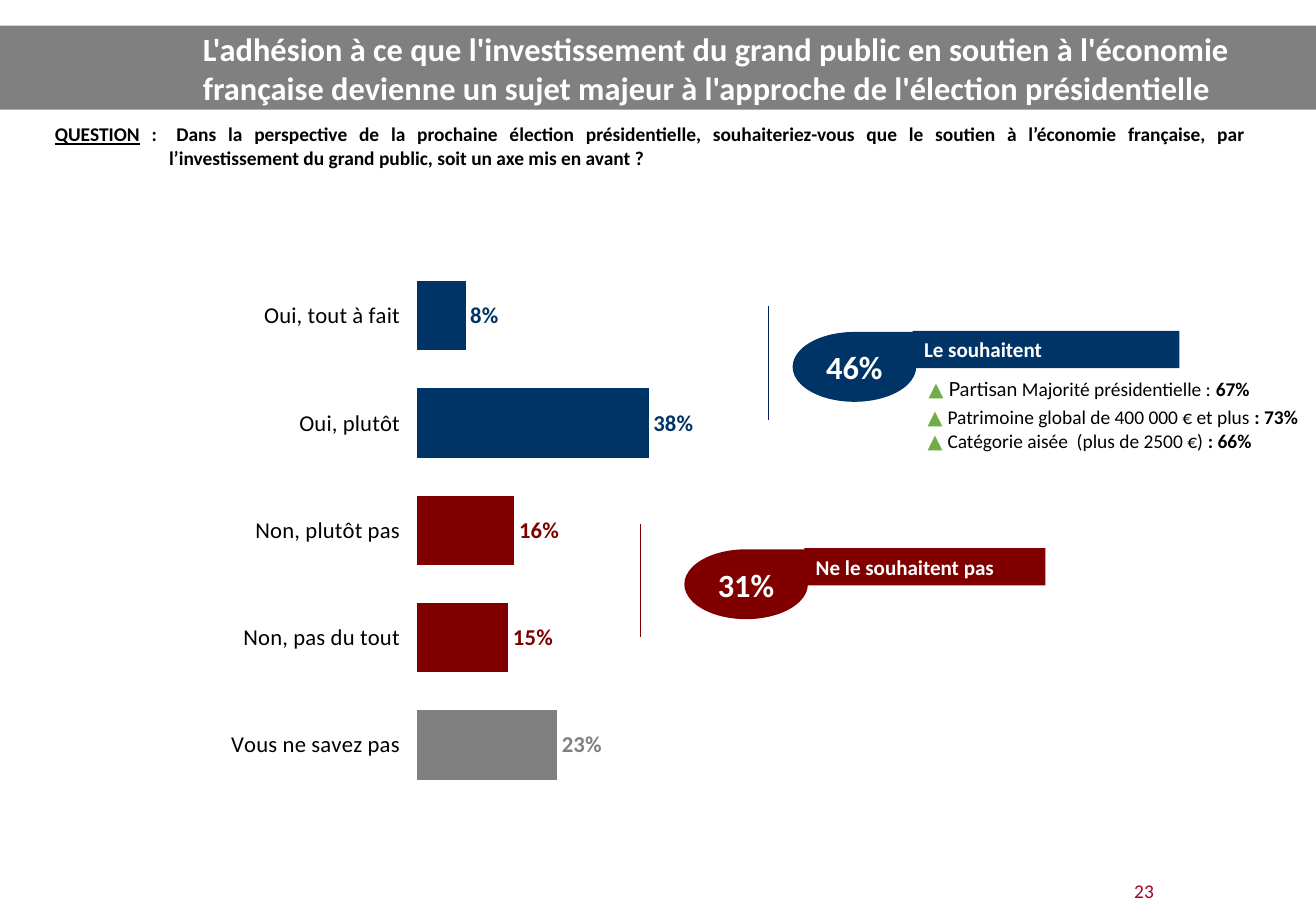
import pptx
import pptx.chart.data
import pptx.dml.color
import pptx.enum.chart
import pptx.enum.shapes
import pptx.enum.text
import pptx.oxml
import pptx.util

COLORS = {"navy": "003366", "rule": "002060", "red": "800000", "gray": "808080",
          "page": "A50021", "green": "70AD47", "black": "000000", "white": "FFFFFF"}
WIDTH, HEIGHT = 11.29, 7.87

TITLE = ("L'adhésion à ce que l'investissement du grand public en soutien à l'économie "
         "française devienne un sujet majeur à l'approche de l'élection présidentielle")
QUESTION = [
    ("QUESTION", {"bold": True, "underline": True}),
    (" :\tDans la perspective de la prochaine élection présidentielle, souhaiteriez-vous que "
     "le soutien à l’économie française, par l’investissement du grand public, soit un axe "
     "mis en avant ?", {"bold": True}),
]
ANSWERS = [
    ("Oui, tout à fait ", 0.08, "navy"),
    ("Oui, plutôt ", 0.38, "navy"),
    ("Non, plutôt pas ", 0.16, "red"),
    ("Non, pas du tout ", 0.15, "red"),
    ("Vous ne savez pas ", 0.23, "gray"),
]
CALLOUTS = [
    {"share": "46%", "label": "Le souhaitent", "color": "navy", "rule": "rule",
     "left": 60.23, "top": 36.2, "bar": 20.28, "rule_left": 58.37},
    {"share": "31%", "label": "Ne le souhaitent pas", "color": "red", "rule": "red",
     "left": 52, "top": 59.9, "bar": 18.33, "rule_left": 48.63},
]
MARK = {"font": "Lato", "color": "green"}
DETAILS = [
    ((69.7, 40.53, 30.2, 3.81), [
        [("▲", MARK), (" Partisan", {"font": "Lato"}),
         (" Majorité présidentielle : ", {}), ("67%", {"bold": True})],
    ]),
    ((69.62, 43.58, 30.2, 6.35), [
        [("▲ ", MARK), ("Patrimoine global de 400 000 € et plus ", {}), (": 73%", {"bold": True})],
        [("▲ ", MARK), ("Catégorie aisée  (plus de 2500 €) ", {}), (": 66%", {"bold": True})],
    ]),
]
PLOT = {"x": 0.304, "y": 0, "w": 0.623, "h": 0.999}
SHAPES = pptx.enum.shapes.MSO_SHAPE
ALIGN = pptx.enum.text.PP_ALIGN
MIDDLE = pptx.enum.text.MSO_ANCHOR.MIDDLE


def across(share):
    return pptx.util.Inches(WIDTH * share / 100)


def down(share):
    return pptx.util.Inches(HEIGHT * share / 100)


def frame(left, top, width, height):
    return across(left), down(top), across(width), down(height)


def rgb(color):
    return pptx.dml.color.RGBColor.from_string(COLORS[color])


def style(font, size=12, color="black", bold=False, underline=False, name="Calibri"):
    font.name, font.size, font.bold = name, pptx.util.Pt(size), bold
    font.underline = underline
    font.color.rgb = rgb(color)


def write(para, text, font="Calibri", **looks):
    span = para.add_run()
    span.text = text
    style(span.font, name=font, **looks)


def add_box(page, place, wrap=True):
    box = page.shapes.add_textbox(*frame(*place))
    box.text_frame.word_wrap = wrap
    return box.text_frame


def add_block(page, kind, place, color):
    block = page.shapes.add_shape(kind, *frame(*place))
    block.shadow.inherit = False
    block.fill.solid()
    block.fill.fore_color.rgb = rgb(color)
    block.line.fill.background()
    block.text_frame.vertical_anchor = MIDDLE
    return block


def add_title(page):
    title = page.shapes.title
    title.left, title.top, title.width, title.height = frame(14.53, 2.8, 83.97, 9.15)
    title.text_frame.auto_size = pptx.enum.text.MSO_AUTO_SIZE.NONE
    title.text_frame.vertical_anchor = MIDDLE
    para = title.text_frame.paragraphs[0]
    para.alignment = ALIGN.LEFT
    write(para, TITLE, size=20, color="white", bold=True)
    band = add_block(page, SHAPES.RECTANGLE, (0, 2.8, 100, 9.15), "gray")
    title.element.addprevious(band.element)


def add_question(page):
    box = add_box(page, (3.37, 12.83, 94.51, 6.1))
    box.margin_left = pptx.util.Inches(0.09)
    box.margin_right = pptx.util.Inches(0.36)
    box.margin_top = box.margin_bottom = pptx.util.Inches(0.04)
    para = box.paragraphs[0]
    para.alignment = ALIGN.JUSTIFY
    indent = pptx.util.Inches(0.98)
    settings = para._p.get_or_add_pPr()
    settings.set("marL", str(indent))
    settings.set("indent", str(-indent))
    for text, looks in QUESTION:
        write(para, text, **looks)


def add_answers(page):
    data = pptx.chart.data.CategoryChartData(number_format="0%")
    data.categories = [name for name, value, color in ANSWERS]
    data.add_series("Series 1", [value for name, value, color in ANSWERS])
    chart = page.shapes.add_chart(pptx.enum.chart.XL_CHART_TYPE.BAR_CLUSTERED,
                                  *frame(9.03, 28.59, 74.49, 58.58), data).chart
    style(chart.font, size=18)
    chart.has_legend = chart.has_title = False

    names = chart.category_axis
    names.reverse_order = True
    names.has_major_gridlines = False
    names.format.line.fill.background()
    style(names.tick_labels.font, size=14)
    values = chart.value_axis
    values.minimum_scale, values.maximum_scale = 0, 1
    values.has_major_gridlines = values.visible = False

    plot = chart.plots[0]
    plot.gap_width = 55
    plot.vary_by_categories = False
    series = plot.series[0]
    labels = series.data_labels
    labels.show_value = True
    labels.number_format, labels.number_format_is_linked = "0%", False
    labels.position = pptx.enum.chart.XL_LABEL_POSITION.OUTSIDE_END
    style(labels.font, size=14, color="navy", bold=True)
    for index, (name, value, color) in enumerate(ANSWERS):
        point = series.points[index]
        point.format.fill.solid()
        point.format.fill.fore_color.rgb = rgb(color)
        if color != "navy":
            style(point.data_label.font, size=14, color=color, bold=True)
            point.data_label.position = labels.position

    area = chart._chartSpace.chart.plotArea
    for layout in area.findall(pptx.oxml.ns.qn("c:layout")):
        area.remove(layout)
    sizes = "".join(f'<c:{side} val="{share}"/>' for side, share in PLOT.items())
    area.insert(0, pptx.oxml.parse_xml(
        f'<c:layout {pptx.oxml.ns.nsdecls("c")}><c:manualLayout><c:layoutTarget val="inner"/>'
        f'<c:xMode val="edge"/><c:yMode val="edge"/>{sizes}</c:manualLayout></c:layout>'))


def add_callout(page, share, label, color, rule, left, top, bar, rule_left):
    banner = add_block(page, SHAPES.RECTANGLE, (left + 9.12, top - 0.12, bar, 4.07), color)
    para = banner.text_frame.paragraphs[0]
    para.alignment = ALIGN.LEFT
    write(para, label, size=13, color="white", bold=True)

    line = page.shapes.add_connector(pptx.enum.shapes.MSO_CONNECTOR.STRAIGHT,
                                     across(rule_left), down(top - 2.8),
                                     across(rule_left), down(top + 9.6))
    line.line.color.rgb = rgb(rule)
    line.line.width = pptx.util.Pt(0.5)
    line._element.spPr.append(pptx.oxml.parse_xml(
        f'<a:effectLst {pptx.oxml.ns.nsdecls("a")}/>'))

    drop = add_block(page, SHAPES.TEAR, (left, top, 9.39, 7.62), color)
    drop.text_frame.margin_left = drop.text_frame.margin_right = 0
    para = drop.text_frame.paragraphs[0]
    para.alignment = ALIGN.CENTER
    write(para, share, size=20, color="white", bold=True)


def main():
    deck = pptx.Presentation()
    deck.slide_width, deck.slide_height = across(100), down(100)
    page = deck.slides.add_slide(deck.slide_layouts[5])
    add_title(page)
    number = add_box(page, (84.32, 95.3, 5.23, 3.81)).paragraphs[0]
    number.alignment = ALIGN.CENTER
    write(number, "23", color="page")
    add_question(page)
    add_answers(page)
    for callout in CALLOUTS:
        add_callout(page, **callout)
    for place, lines in DETAILS:
        box = add_box(page, place, wrap=False)
        for index, spans in enumerate(lines):
            para = box.add_paragraph() if index else box.paragraphs[0]
            for text, looks in spans:
                write(para, text, **looks)
    deck.save("out.pptx")


if __name__ == "__main__":
    main()
